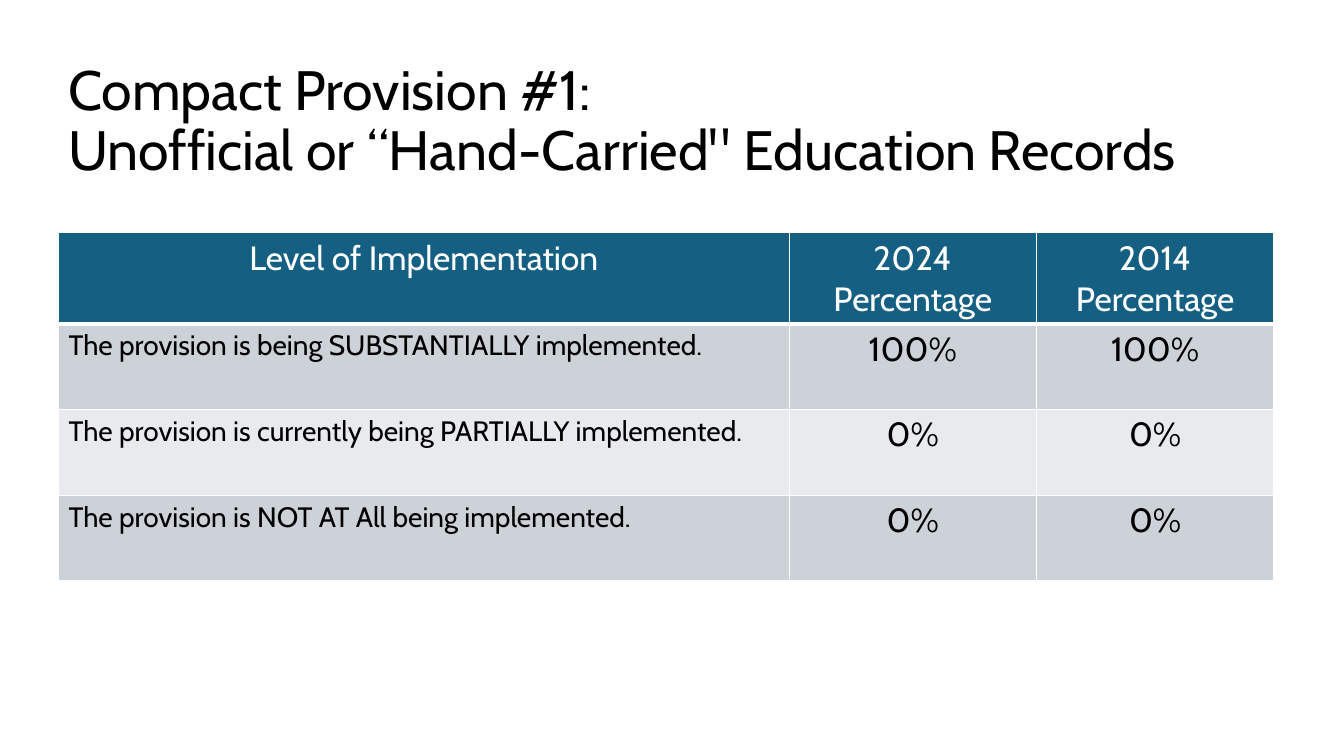
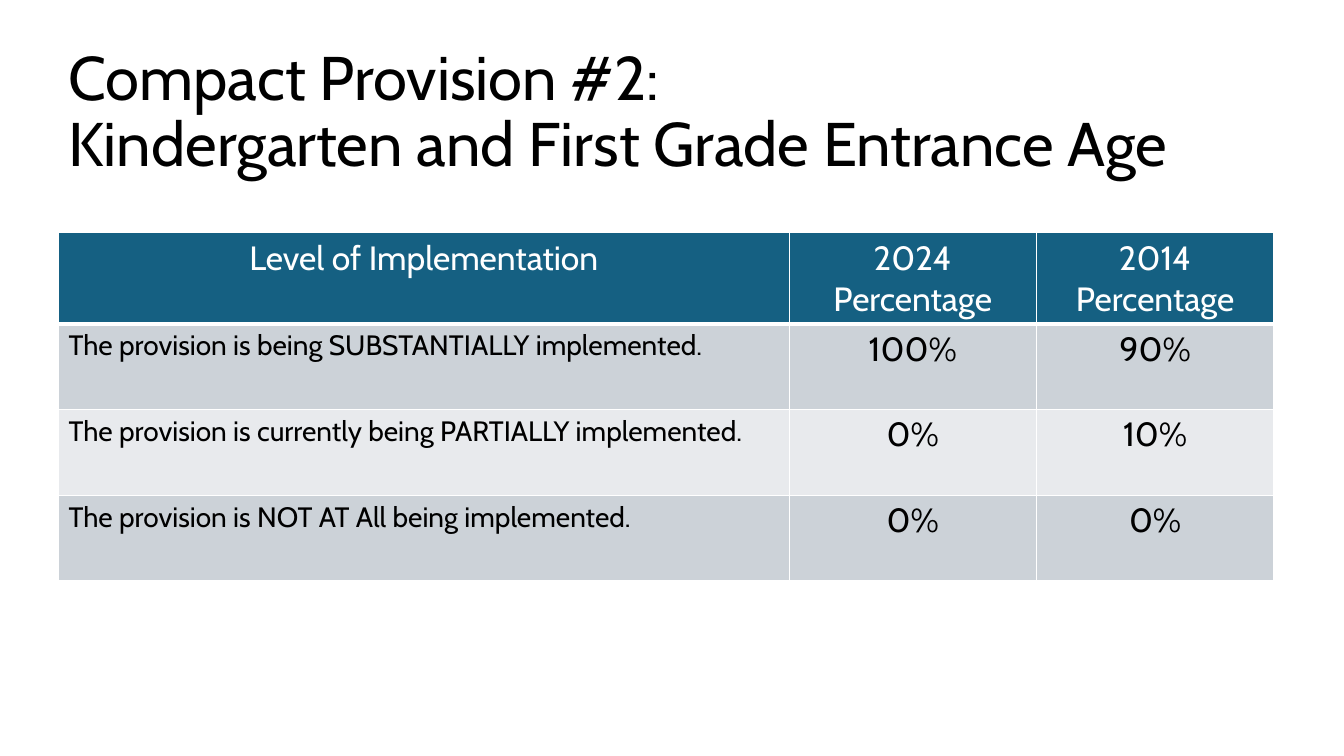
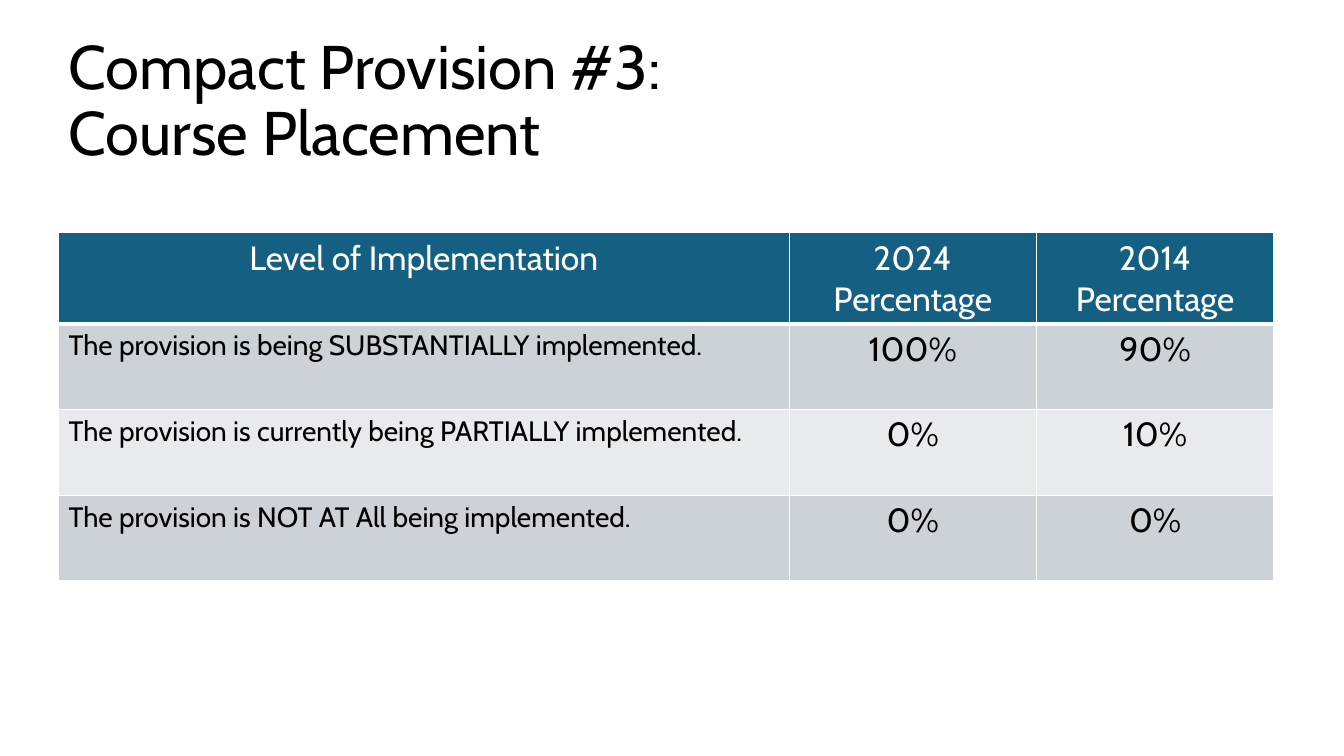
from lxml.etree import SubElement
from pptx import Presentation
from pptx.dml.color import RGBColor
from pptx.enum.text import MSO_ANCHOR, PP_ALIGN
from pptx.oxml.ns import qn
from pptx.util import Pt

FONT = "Cabin"
COLORS = {
    "text": "000000",
    "header": "156082",
    "header_text": "FFFFFF",
    "border": "FFFFFF",
    "odd_row": "CCD2D8",
    "even_row": "E8EAED",
}
SLIDE_SIZE = (960, 540)
LEFT = 41.76
TITLE_HEIGHT = 104.4
TABLE_TOP = 166.32
COLUMN_WIDTHS = (522, 176.4, 169.92)
HEADER_HEIGHT, ROW_HEIGHT = 65, 61.2

HEADINGS = ("Level of Implementation", "2024 Percentage", "2014 Percentage")
LEVELS = (
    "The provision is being SUBSTANTIALLY implemented.",
    "The provision is currently being PARTIALLY implemented.",
    "The provision is NOT AT All being implemented.",
)
PROVISIONS = (
    dict(title="Compact Provision #1:\vUnofficial or “Hand-Carried\" Education Records",
         title_top=35.28, title_width=849.6, title_size=39.6,
         shares_2024=(100, 0, 0), shares_2014=(100, 0, 0)),
    dict(title="Compact Provision #2:\vKindergarten and First Grade Entrance Age",
         title_top=28.8, title_width=828, title_size=44,
         shares_2024=(100, 0, 0), shares_2014=(90, 10, 0)),
    dict(title="Compact Provision #3:\vCourse Placement",
         title_top=20.88, title_width=828, title_size=44,
         shares_2024=(100, 0, 0), shares_2014=(90, 10, 0)),
)


def write(frame, text, size, color="text", align=PP_ALIGN.LEFT, spacing=None):
    """Fill a text frame with one paragraph; a vertical tab breaks the line."""
    paragraph = frame.paragraphs[0]
    paragraph.text = text
    paragraph.alignment = align
    paragraph.line_spacing = spacing
    for run in paragraph.runs:
        run.font.name = FONT
        run.font.size = Pt(size)
        run.font.bold = False
        run.font.color.rgb = RGBColor.from_string(COLORS[color])


def set_borders(cell, bottom=1):
    properties = cell._tc.get_or_add_tcPr()
    for side, width in (("L", 1), ("R", 1), ("T", 1), ("B", bottom)):
        line = SubElement(properties, qn(f"a:ln{side}"), w=str(Pt(width)))
        fill = SubElement(line, qn("a:solidFill"))
        SubElement(fill, qn("a:srgbClr"), val=COLORS["border"])


def add_title(slide, text, left, top, width, height, size):
    frame = slide.shapes.add_textbox(Pt(left), Pt(top), Pt(width), Pt(height)).text_frame
    frame.word_wrap = True
    frame.vertical_anchor = MSO_ANCHOR.MIDDLE
    write(frame, text, size, spacing=0.9)


def add_level_table(slide, rows, left, top):
    heights = [HEADER_HEIGHT] + [ROW_HEIGHT] * (len(rows) - 1)
    table = slide.shapes.add_table(
        len(rows), len(COLUMN_WIDTHS), Pt(left), Pt(top),
        Pt(sum(COLUMN_WIDTHS)), Pt(sum(heights))).table
    for column, width in zip(table.columns, COLUMN_WIDTHS):
        column.width = Pt(width)
    for r, (values, height) in enumerate(zip(rows, heights)):
        table.rows[r].height = Pt(height)
        is_header = r == 0
        fill = "header" if is_header else "odd_row" if r % 2 else "even_row"
        for c, value in enumerate(values):
            cell = table.cell(r, c)
            is_level = c == 0 and not is_header
            set_borders(cell, bottom=3 if is_header else 1)
            cell.fill.solid()
            cell.fill.fore_color.rgb = RGBColor.from_string(COLORS[fill])
            write(cell.text_frame, value,
                  size=20 if is_level else 24,
                  color="header_text" if is_header else "text",
                  align=PP_ALIGN.LEFT if is_level else PP_ALIGN.CENTER)


def add_provision_slide(deck, title, title_top, title_width, title_size,
                        shares_2024, shares_2014):
    slide = deck.slides.add_slide(deck.slide_layouts[6])
    add_title(slide, title, LEFT, title_top, title_width, TITLE_HEIGHT, title_size)
    rows = [HEADINGS]
    for level, new, old in zip(LEVELS, shares_2024, shares_2014):
        rows.append((level, f"{new}%", f"{old}%"))
    add_level_table(slide, rows, LEFT, TABLE_TOP)


def main():
    deck = Presentation()
    deck.slide_width, deck.slide_height = map(Pt, SLIDE_SIZE)
    for provision in PROVISIONS:
        add_provision_slide(deck, **provision)
    deck.save("out.pptx")


if __name__ == "__main__":
    main()
